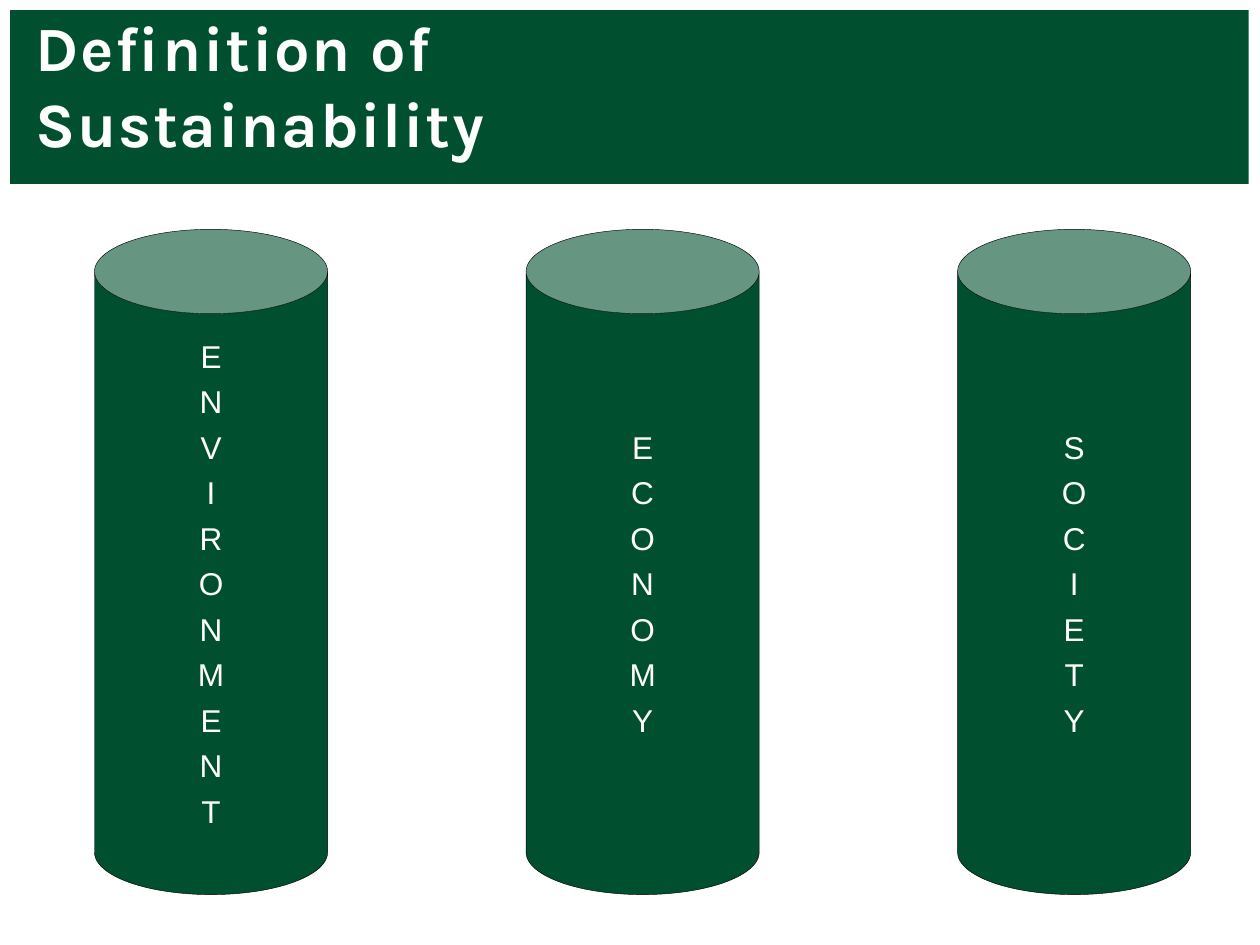
from pptx import Presentation
from pptx.dml.color import RGBColor
from pptx.enum import shapes, text
from pptx.util import Inches, Pt

TITLE = "Definition of Sustainability"
PILLARS = ["ENVIRONMENT", "ECONOMY", "SOCIETY"]
COLORS = {"green": "00502F", "white": "FFFFFF", "outline": "000005"}

PILLAR_LEFT, PILLAR_TOP = 0.75, 1.82
PILLAR_WIDTH, PILLAR_HEIGHT = 1.85, 5.28
PILLAR_STEP = 3.425


def color(name):
    return RGBColor.from_string(COLORS[name])


def add_green_shape(page, kind, left, top, width, height):
    shape = page.shapes.add_shape(
        kind, Inches(left), Inches(top), Inches(width), Inches(height))
    shape.shadow.inherit = False
    shape.fill.solid()
    shape.fill.fore_color.rgb = color("green")
    shape.line.fill.background()
    return shape


def prepare_frame(shape, anchor, wrap):
    frame = shape.text_frame
    frame.margin_left = frame.margin_right = 0
    frame.margin_top = frame.margin_bottom = 0
    frame.vertical_anchor = anchor
    frame.word_wrap = wrap
    return frame


def add_span(para, content, font, size, bold=False):
    span = para.add_run()
    span.text = content
    span.font.name = font
    span.font.size = Pt(size)
    span.font.bold = bold
    span.font.color.rgb = color("white")
    return span


def add_title(page):
    box = page.shapes.add_textbox(
        Inches(0.28), Inches(0.46), Inches(6.42), Inches(0.81))
    frame = prepare_frame(box, text.MSO_ANCHOR.BOTTOM, True)
    frame.margin_right = Inches(0.5)
    span = add_span(frame.paragraphs[0], TITLE, "Karla", 36, bold=True)
    span.font._element.set("spc", "100")


def add_pillar(page, index, word):
    """Draw a can with its word stacked one letter to a line."""
    can = add_green_shape(
        page, shapes.MSO_SHAPE.CAN, PILLAR_LEFT + index * PILLAR_STEP,
        PILLAR_TOP, PILLAR_WIDTH, PILLAR_HEIGHT)
    can.adjustments[0] = 0.362
    can.line.color.rgb = color("outline")
    can.line.width = Pt(0.25)
    frame = prepare_frame(can, text.MSO_ANCHOR.MIDDLE, False)
    for position, letter in enumerate(word):
        para = frame.add_paragraph() if position else frame.paragraphs[0]
        para.alignment = text.PP_ALIGN.CENTER
        if position:
            para.space_before = Pt(4.4)
        add_span(para, letter, "Arial", 18)


def main():
    deck = Presentation()
    deck.slide_width, deck.slide_height = Inches(10), Inches(7.5)
    page = deck.slides.add_slide(deck.slide_layouts[6])
    add_green_shape(page, shapes.MSO_SHAPE.RECTANGLE, 0.08, 0.08, 9.83, 1.38)
    add_title(page)
    for index, word in enumerate(PILLARS):
        add_pillar(page, index, word)
    deck.save("out.pptx")


if __name__ == "__main__":
    main()
